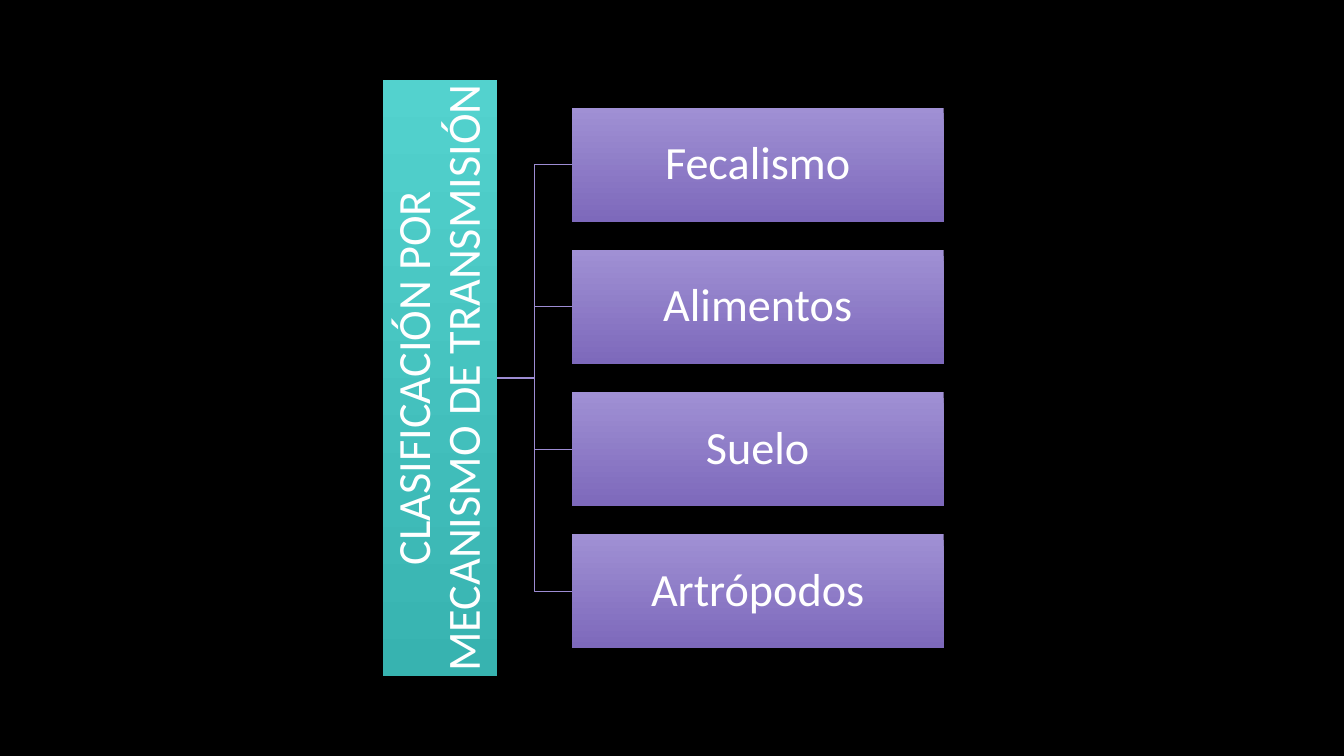
from dataclasses import dataclass

import lxml.etree
import pptx
import pptx.dml.color
import pptx.enum.shapes
import pptx.enum.text
import pptx.oxml.ns
import pptx.shapes.autoshape
import pptx.slide
import pptx.util

Inches = pptx.util.Inches


@dataclass(frozen=True)
class Theme:
    background: str = "000000"
    text: str = "FFFFFF"
    branch: str = "9D8CD3"
    root_gradient: tuple[str, str] = ("53D2CE", "37B3B0")
    mechanism_gradient: tuple[str, str] = ("A090D4", "7D69BB")
    font: str = "Calibri"
    text_size: float = 33
    branch_width: float = 0.75


@dataclass(frozen=True)
class Node:
    label: str
    left: float
    top: float
    width: float
    height: float
    gradient: tuple[str, str]
    reads_upward: bool = False


THEME = Theme()
MIDDLE = 3.75
MECHANISMS = ("Fecalismo", "Alimentos", "Suelo", "Artrópodos")
BOX_HEIGHT, BOX_GAP = 1.13, 0.28
PITCH = BOX_HEIGHT + BOX_GAP
FIRST_TOP = MIDDLE - (len(MECHANISMS) * PITCH - BOX_GAP) / 2


def rgb(value: str) -> pptx.dml.color.RGBColor:
    return pptx.dml.color.RGBColor.from_string(value)


def draw_node(slide: pptx.slide.Slide, node: Node) -> pptx.shapes.autoshape.Shape:
    box = slide.shapes.add_shape(
        pptx.enum.shapes.MSO_SHAPE.RECTANGLE,
        Inches(node.left), Inches(node.top), Inches(node.width), Inches(node.height))
    box.shadow.inherit = False
    box.line.fill.background()
    box.fill.gradient()
    box.fill.gradient_angle = 270
    for stop, color in zip(box.fill.gradient_stops, node.gradient):
        stop.color.rgb = rgb(color)

    frame = box.text_frame
    frame.text = node.label
    frame.word_wrap = True
    frame.vertical_anchor = pptx.enum.text.MSO_ANCHOR.MIDDLE
    frame.margin_left = frame.margin_right = Inches(0.02)
    frame.margin_top = frame.margin_bottom = Inches(0.02)
    if node.reads_upward:
        frame._txBody.bodyPr.set("vert", "vert270")
    paragraph = frame.paragraphs[0]
    paragraph.alignment = pptx.enum.text.PP_ALIGN.CENTER
    paragraph.line_spacing = 0.9
    font = paragraph.runs[0].font
    font.name = THEME.font
    font.size = pptx.util.Pt(THEME.text_size)
    font.color.rgb = rgb(THEME.text)
    return box


def draw_branch(slide: pptx.slide.Slide, root: pptx.shapes.autoshape.Shape,
                mechanism: pptx.shapes.autoshape.Shape) -> None:
    branch = slide.shapes.add_connector(
        pptx.enum.shapes.MSO_CONNECTOR.ELBOW, 0, 0, 0, 0)
    branch.begin_connect(root, 3)
    branch.end_connect(mechanism, 1)
    branch.line.color.rgb = rgb(THEME.branch)
    branch.line.width = pptx.util.Pt(THEME.branch_width)
    lxml.etree.SubElement(branch._element.spPr, pptx.oxml.ns.qn("a:effectLst"))


def main() -> None:
    presentation = pptx.Presentation()
    presentation.slide_width = Inches(13.33)
    presentation.slide_height = Inches(7.5)
    slide = presentation.slides.add_slide(presentation.slide_layouts[6])
    slide.background.fill.solid()
    slide.background.fill.fore_color.rgb = rgb(THEME.background)

    # Root bar, with its text running upward
    root = draw_node(slide, Node(
        "CLASIFICACIÓN POR MECANISMO DE TRANSMISIÓN",
        3.8, MIDDLE - 2.96, 1.13, 5.92, THEME.root_gradient, reads_upward=True))

    # Transmission mechanisms, each joined to the root
    for row, label in enumerate(MECHANISMS):
        mechanism = draw_node(slide, Node(
            label, 5.67, FIRST_TOP + row * PITCH, 3.69, BOX_HEIGHT,
            THEME.mechanism_gradient))
        draw_branch(slide, root, mechanism)

    presentation.save("out.pptx")


if __name__ == "__main__":
    main()
